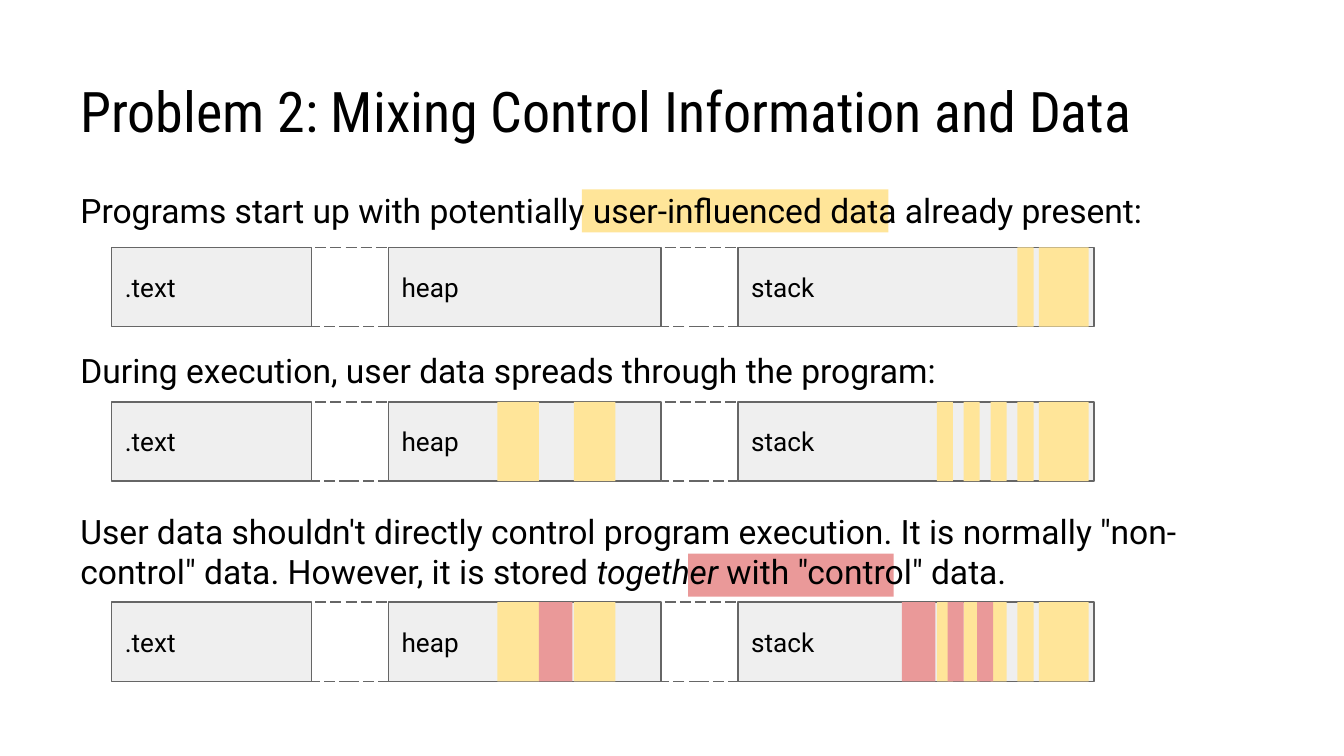
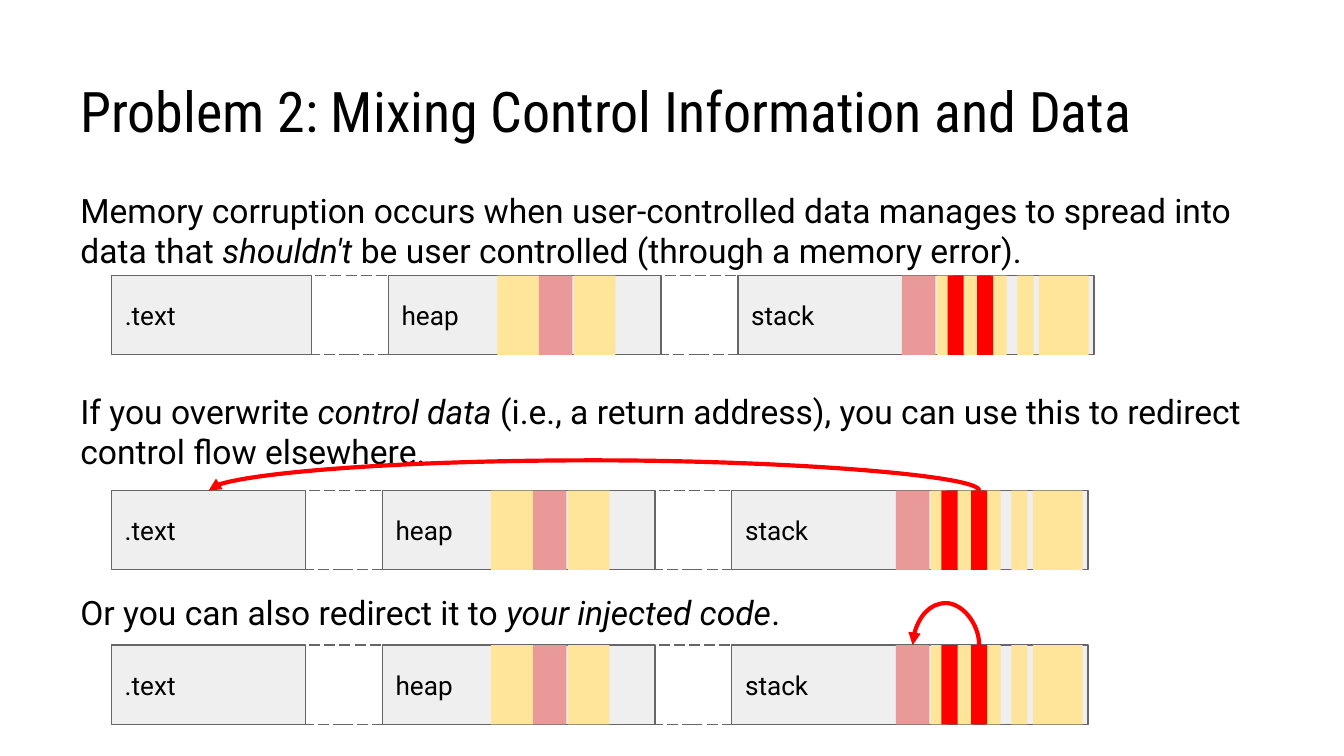
from dataclasses import dataclass

import lxml.etree
import pptx
import pptx.dml.color
import pptx.enum.dml
import pptx.enum.shapes
import pptx.enum.text
import pptx.oxml.ns
import pptx.shapes.autoshape
import pptx.slide
import pptx.util

Shape = pptx.shapes.autoshape.Shape
Slide = pptx.slide.Slide


@dataclass(frozen=True)
class Theme:
    ink: str = "000000"
    segment: str = "EFEFEF"
    outline: str = "666666"
    user: str = "FFE599"
    control: str = "EA9999"
    corrupted: str = "FF0000"
    title_font: str = "Roboto Condensed"
    body_font: str = "Roboto"
    title_size: float = 30
    body_size: float = 18
    label_size: float = 14
    thin: float = 0.75
    thick: float = 2.25
    paragraph_gap: float = 64.5


THEME = Theme()

# Square grid: 100 columns across the slide, 56.25 rows down
WIDTH = pptx.util.Inches(10)
CELL = WIDTH // 100
ROWS = 56.25
BAR_LEFT, BAR_ROWS = 8.3, 5.9
GAP, HEAP, STACK = 5.7, 20.3, 26.5
HAIR = 600  # thickness of a curved arrow's frame, in EMU


@dataclass(frozen=True)
class Box:
    col: float
    row: float
    cols: float
    rows: float


@dataclass(frozen=True)
class Mark:
    """A stretch of marked memory, placed from the start of its segment."""
    name: str
    segment: str
    offset: float
    cols: float
    color: str


@dataclass(frozen=True)
class MemoryBar:
    row: float
    marks: tuple[Mark, ...]
    text_cols: float = 14.9


@dataclass(frozen=True)
class Jump:
    """A red arrow between two named parts of one memory bar."""
    bar: int
    source: str
    target: str
    lift: float


@dataclass(frozen=True)
class Page:
    paragraphs: tuple[tuple[str, ...], ...]  # every second piece is italic
    bars: tuple[MemoryBar, ...]
    highlights: tuple[tuple[Box, str], ...] = ()
    jumps: tuple[Jump, ...] = ()


def emu(cells: float) -> int:
    return round(cells * CELL)


def rgb(color: str) -> pptx.dml.color.RGBColor:
    return pptx.dml.color.RGBColor.from_string(color)


def place(box: Box) -> tuple[int, int, int, int]:
    return emu(box.col), emu(box.row), emu(box.cols), emu(box.rows)


def format_run(r, font: str, size: float, italic: bool = False) -> None:
    r.font.name = font
    r.font.size = pptx.util.Pt(size)
    r.font.color.rgb = rgb(THEME.ink)
    if italic:
        r.font.italic = True


def set_frame(tf, anchor) -> None:
    tf.word_wrap = True
    tf.vertical_anchor = anchor
    tf.margin_left = tf.margin_right = tf.margin_top = tf.margin_bottom = emu(1)


def add_rect(slide: Slide, box: Box, fill: str | None, outlined: bool = False) -> Shape:
    sp = slide.shapes.add_shape(pptx.enum.shapes.MSO_SHAPE.RECTANGLE, *place(box))
    sp.shadow.inherit = False
    if fill:
        sp.fill.solid()
        sp.fill.fore_color.rgb = rgb(fill)
    else:
        sp.fill.background()
    if outlined:
        sp.line.color.rgb = rgb(THEME.outline)
        sp.line.width = pptx.util.Pt(THEME.thin)
    else:
        sp.line.fill.background()
    return sp


def add_text(slide: Slide, box: Box, paragraphs: tuple[tuple[str, ...], ...],
             font: str, size: float, anchor) -> None:
    tf = slide.shapes.add_textbox(*place(box)).text_frame
    set_frame(tf, anchor)
    for i, pieces in enumerate(paragraphs):
        p = tf.add_paragraph() if i else tf.paragraphs[0]
        if i:
            p.space_before = pptx.util.Pt(THEME.paragraph_gap)
        for j, piece in enumerate(pieces):
            r = p.add_run()
            r.text = piece
            format_run(r, font, size, italic=j % 2 == 1)


def add_bar(slide: Slide, bar: MemoryBar) -> dict[str, Shape]:
    """Draw one memory layout and return its parts by name."""
    parts: dict[str, Shape] = {}
    starts: dict[str, float] = {}
    gaps: list[float] = []
    col = BAR_LEFT
    for name, cols in ((".text", bar.text_cols), ("heap", HEAP), ("stack", STACK)):
        sp = add_rect(slide, Box(col, bar.row, cols, BAR_ROWS), THEME.segment, True)
        tf = sp.text_frame
        tf.text = name
        set_frame(tf, pptx.enum.text.MSO_ANCHOR.MIDDLE)
        p = tf.paragraphs[0]
        p.alignment = pptx.enum.text.PP_ALIGN.LEFT
        format_run(p.runs[0], THEME.body_font, THEME.label_size)
        parts[name], starts[name] = sp, col
        gaps.append(col + cols)
        col += cols + GAP
    # Unmapped memory lies between the segments
    for gap in gaps[:-1]:
        sp = add_rect(slide, Box(gap, bar.row, GAP, BAR_ROWS), None, True)
        sp.line.dash_style = pptx.enum.dml.MSO_LINE.LONG_DASH
    for mark in bar.marks:
        box = Box(starts[mark.segment] + mark.offset, bar.row, mark.cols, BAR_ROWS)
        parts[mark.name] = add_rect(slide, box, mark.color)
    return parts


def add_jump(slide: Slide, source: Shape, target: Shape, lift: float) -> None:
    """Arch leftwards from the top of source to the top of target."""
    start, end = (sp.left + sp.width // 2 for sp in (source, target))
    middle, half = (start + end) // 2, (start - end) // 2
    c = slide.shapes.add_connector(pptx.enum.shapes.MSO_CONNECTOR.CURVE, middle,
                                   source.top - half, middle + HAIR, source.top + half)
    c.line.color.rgb = rgb(THEME.corrupted)
    c.line.width = pptx.util.Pt(THEME.thick)
    # A quarter turn lays the arch flat; the adjustment sets its height
    qn = pptx.oxml.ns.qn
    props = c._element.spPr
    props.find(qn("a:xfrm")).set("rot", "5400000")
    geometry = props.find(qn("a:prstGeom"))
    guides = geometry.find(qn("a:avLst"))
    if guides is None:
        guides = lxml.etree.SubElement(geometry, qn("a:avLst"))
    lxml.etree.SubElement(guides, qn("a:gd"), name="adj1",
                          fmla=f"val {round(-emu(lift) / HAIR * 100000)}")
    lxml.etree.SubElement(props.find(qn("a:ln")), qn("a:tailEnd"), type="triangle")
    lxml.etree.SubElement(props, qn("a:effectLst"))


def add_page(prs, page: Page) -> None:
    slide = prs.slides.add_slide(prs.slide_layouts[6])
    anchors = pptx.enum.text.MSO_ANCHOR
    for box, color in page.highlights:
        add_rect(slide, box, color)
    add_text(slide, Box(5, 13.1, 90, 40.7), page.paragraphs,
             THEME.body_font, THEME.body_size, anchors.TOP)
    add_text(slide, Box(5, 2.3, 90, 9.4), ((TITLE,),),
             THEME.title_font, THEME.title_size, anchors.BOTTOM)
    bars = [add_bar(slide, bar) for bar in page.bars]
    for jump in page.jumps:
        parts = bars[jump.bar]
        add_jump(slide, parts[jump.source], parts[jump.target], jump.lift)


# Marked memory, from program start to corruption
def control_marks(stack_color: str) -> tuple[Mark, ...]:
    return (
        Mark("heap control", "heap", 11.2, 2.5, THEME.control),
        Mark("stack control", "stack", 12.2, 2.5, THEME.control),
        Mark("saved pointer", "stack", 15.6, 1.2, stack_color),
        Mark("return address", "stack", 17.8, 1.2, stack_color),
    )


AT_START = (
    Mark("argument", "stack", 20.8, 1.2, THEME.user),
    Mark("environment", "stack", 22.4, 3.7, THEME.user),
)
SPREAD = AT_START + tuple(
    Mark(f"local {i}", "stack", 18.8 - 2 * i, 1.2, THEME.user) for i in range(3)
) + tuple(
    Mark(f"buffer {i}", "heap", 13.8 - 5.7 * i, 3.1, THEME.user) for i in range(2)
)
MIXED = SPREAD + control_marks(THEME.control)
OVERWRITTEN = SPREAD + control_marks(THEME.corrupted)

TITLE = "Problem 2: Mixing Control Information and Data"
NARROW = 14.45
PAGES = (
    Page(
        paragraphs=(
            ("Programs start up with potentially user-influenced data already present:",),
            ("During execution, user data spreads through the program:",),
            ("User data shouldn't directly control program execution. It is normally "
             "\"non-control\" data. However, it is stored ", "together",
             " with \"control\" data."),
        ),
        bars=(MemoryBar(18.4, AT_START), MemoryBar(29.9, SPREAD), MemoryBar(44.8, MIXED)),
        highlights=((Box(51.2, 41.2, 15.3, 3.2), THEME.control),
                    (Box(43.3, 14.1, 22.8, 3.2), THEME.user)),
    ),
    Page(
        paragraphs=(
            ("Memory corruption occurs when user-controlled data manages to spread into "
             "data that ", "shouldn't", " be user controlled (through a memory error)."),
            ("If you overwrite ", "control data",
             " (i.e., a return address), you can use this to redirect control flow "
             "elsewhere."),
            ("Or you can also redirect it to ", "your injected code", "."),
        ),
        bars=(MemoryBar(20.5, OVERWRITTEN), MemoryBar(36.5, OVERWRITTEN, NARROW),
              MemoryBar(48, OVERWRITTEN, NARROW)),
        jumps=(Jump(1, "return address", ".text", 1.87),
               Jump(2, "return address", "stack control", 2.6)),
    ),
)


def main() -> None:
    prs = pptx.Presentation()
    prs.slide_width, prs.slide_height = WIDTH, emu(ROWS)
    for page in PAGES:
        add_page(prs, page)
    prs.save("out.pptx")


if __name__ == "__main__":
    main()
